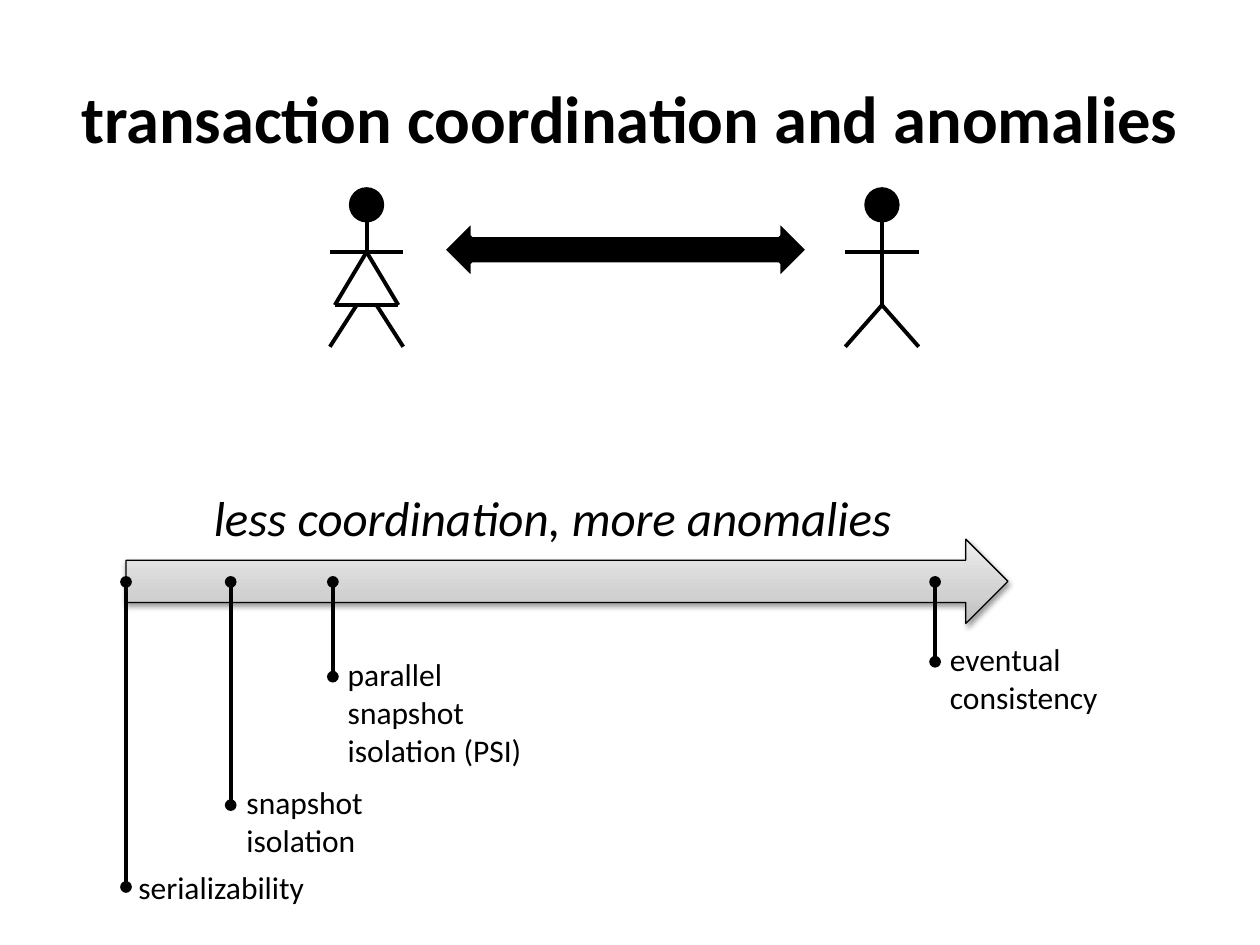
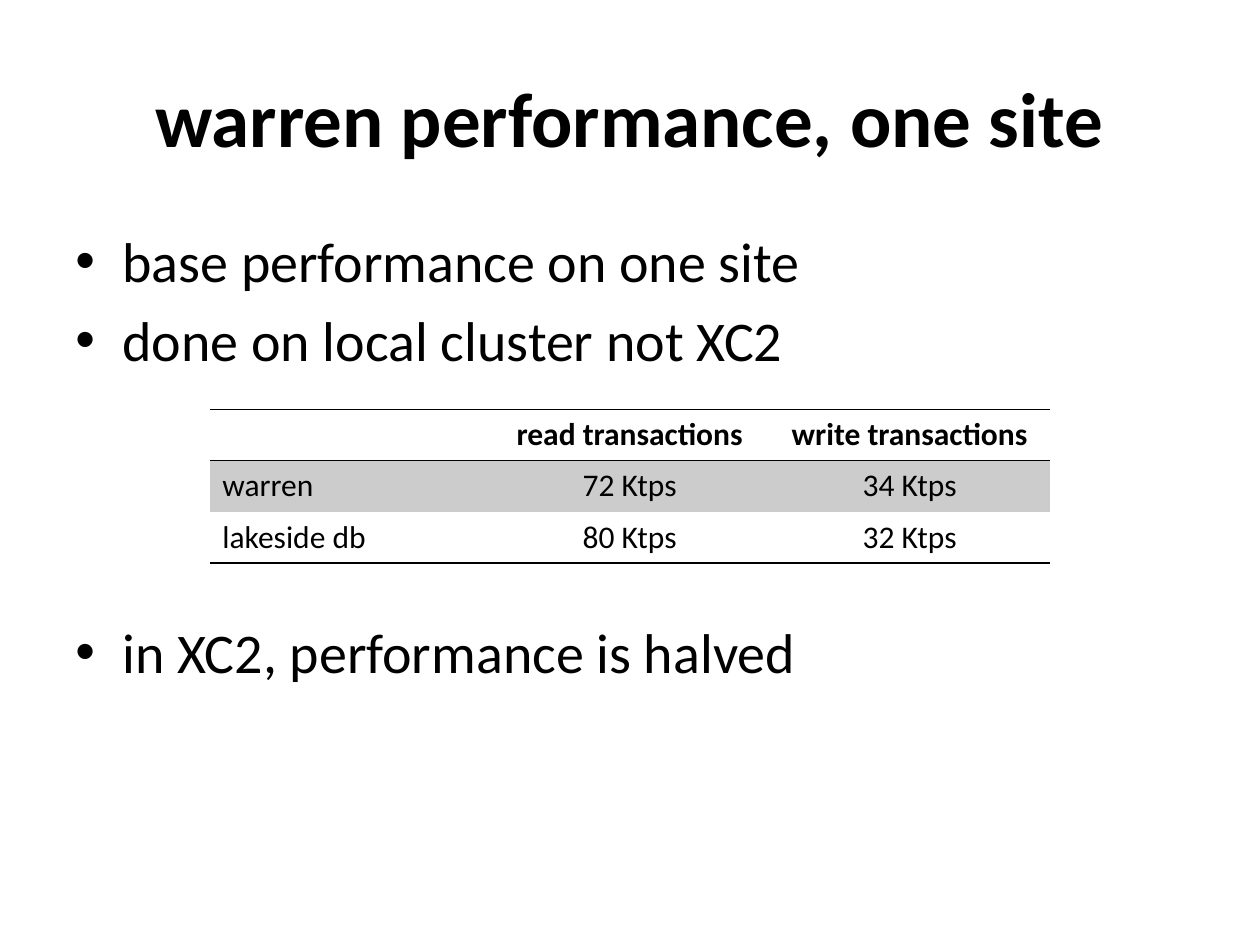
"""Build two slides on transaction coordination and one-site performance."""
from copy import deepcopy

from lxml.etree import SubElement
from pptx import Presentation
from pptx.dml.color import RGBColor
from pptx.enum.shapes import MSO_CONNECTOR as CONN, MSO_SHAPE as SHAPE
from pptx.enum.text import MSO_ANCHOR as ANCHOR, MSO_AUTO_SIZE as AUTO, PP_ALIGN as ALIGN
from pptx.oxml.ns import qn
from pptx.util import Cm, Pt

FONT, INK, WHITE, BAND = "Calibri", "000000", "FFFFFF", "CCCCCC"
rgb = RGBColor.from_string


def add_text(s, text, box, size, bold=False, italic=False, wrap=False):
    tf = s.shapes.add_textbox(*map(Cm, box)).text_frame
    tf.text = text
    tf.word_wrap = wrap
    tf.auto_size = AUTO.NONE if wrap else AUTO.SHAPE_TO_FIT_TEXT
    for p in tf.paragraphs:
        for r in p.runs:
            f = r.font
            f.name, f.size, f.bold, f.italic = FONT, Pt(size), bold, italic
            f.color.rgb = rgb(INK)
    return tf


def add_line(s, x1, y1, x2, y2, dots=False):
    c = s.shapes.add_connector(CONN.STRAIGHT, Cm(x1), Cm(y1), Cm(x2), Cm(y2))
    c.line.width = Pt(2.25)
    c.line.color.rgb = rgb(INK)
    SubElement(c._element.spPr, qn("a:effectLst"))
    if dots:
        for end in ("a:headEnd", "a:tailEnd"):
            SubElement(c.line._get_or_add_ln(), qn(end), type="oval")


prs = Presentation()
prs.slide_width, prs.slide_height = Cm(25.4), Cm(19.05)
titles = [("transaction coordination and anomalies", 38),
          ("warren performance, one site", 44)]
for title, size in titles:
    s = prs.slides.add_slide(prs.slide_layouts[6])
    tf = add_text(s, title, (1.27, 0.76, 22.86, 3.18), size, bold=True, wrap=True)
    tf.vertical_anchor = ANCHOR.MIDDLE
    tf.paragraphs[0].alignment = ALIGN.CENTER
s, perf = prs.slides

add_text(s, "less coordination, more anomalies", (4.06, 9.7, 14.73, 1.45), 28, italic=True)

scale = s.shapes.add_shape(SHAPE.RIGHT_ARROW, Cm(2.54), Cm(10.87), Cm(17.78), Cm(1.7))
scale.fill.gradient()
scale.fill.gradient_angle = 90
gs_list = scale._element.spPr.find(qn("a:gradFill")).find(qn("a:gsLst"))
gs_list.append(deepcopy(gs_list[0]))
shades = [(0, "BDBDBD"), (0.35, "D1D1D1"), (1, "EEEEEE")]
for stop, (position, shade) in zip(scale.fill.gradient_stops, shades):
    stop.position = position
    stop.color.rgb = rgb(shade)
scale.line.color.rgb = rgb(INK)
scale.line.width = Pt(0.75)
scale.shadow.inherit = False
shadow = SubElement(scale._element.spPr.find(qn("a:effectLst")), qn("a:outerShdw"),
                    blurRad=str(Pt(3.1)), dist=str(Pt(1.6)), dir="5400000", rotWithShape="0")
SubElement(SubElement(shadow, qn("a:srgbClr"), val=INK), qn("a:alpha"), val="38000")

levels = [
    (2.54, 17.88, "serializability", (2.54, 17.37, 3.89, 1.02)),
    (4.65, 16.23, "snapshot\visolation", (4.72, 15.67, 2.9, 1.98)),
    (6.71, 13.64, "parallel\nsnapshot\visolation (PSI)", (6.76, 13.08, 4.06, 2.57)),
    (18.85, 13.34, "eventual\nconsistency", (18.9, 12.78, 3.53, 1.63)),
]
for x, bottom, label, box in levels:
    add_text(s, label, box, 18)
    add_line(s, x, 11.73, x, bottom, dots=True)

NECK, ARMS, HIP, FEET, REACH = 4.45, 5.08, 6.15, 6.99, 0.74
man = [(0, NECK, 0, HIP), (0, HIP, -REACH, FEET), (0, HIP, REACH, FEET)]
woman = [(0, NECK, 0, ARMS), (-0.2, HIP, -REACH, FEET), (0.2, HIP, REACH, FEET),
         (0, ARMS, -0.64, HIP), (0, ARMS, 0.64, HIP), (-0.64, HIP, 0.64, HIP)]
for x, limbs in ((17.78, man), (7.39, woman)):
    head = s.shapes.add_shape(SHAPE.OVAL, Cm(x - 0.32), Cm(3.81), Cm(0.64), Cm(0.64))
    head.fill.solid()
    head.fill.fore_color.rgb = head.line.color.rgb = rgb(INK)
    head.line.width = Pt(2)
    head.shadow.inherit = False
    for x1, y1, x2, y2 in limbs + [(-REACH, ARMS, REACH, ARMS)]:
        add_line(s, x + x1, y1, x + x2, y2)

link = s.shapes.add_shape(SHAPE.LEFT_RIGHT_ARROW, Cm(8.94), Cm(4.45), Cm(7.34), Cm(1.17))
link.fill.solid()
link.fill.fore_color.rgb = rgb(INK)
link.line.color.rgb = rgb(WHITE)
link.line.width = Pt(2)
link.shadow.inherit = False

bullets = ["base performance on one site", "done on local cluster not XC2",
           "in XC2, performance is halved"]
tf = add_text(perf, "\n".join(bullets), (1.27, 4.45, 22.86, 12.57), 32, wrap=True)
for p, gap in zip(tf.paragraphs, (6.4, 6.4, 140)):
    p.space_before = Pt(gap)
    pPr = p._p.get_or_add_pPr()
    pPr.set("marL", str(Cm(0.95)))
    pPr.set("indent", str(-Cm(0.95)))
    SubElement(pPr, qn("a:buFont"), typeface="Arial")
    SubElement(pPr, qn("a:buChar"), char="•")

rows = [("", "read transactions", "write transactions"),
        ("warren", "72 Ktps", "34 Ktps"),
        ("lakeside db", "80 Ktps", "32 Ktps")]
frame = perf.shapes.add_table(3, 3, Cm(4.23), Cm(8.25), Cm(16.93), Cm(3.1))
tbl = frame.table
tbl.first_row = tbl.horz_banding = False
tbl._tbl.tblPr[0].text = "{2D5ABB26-0587-4C30-8999-92F81FD0307C}"
edges = [("a:lnT", "a:lnB"), (), ("a:lnB",)]
for i, row in enumerate(rows):
    for j, text in enumerate(row):
        cell = tbl.cell(i, j)
        for edge in edges[i]:
            ln = SubElement(cell._tc.get_or_add_tcPr(), qn(edge), w=str(Pt(1)))
            SubElement(SubElement(ln, qn("a:solidFill")), qn("a:srgbClr"), val=INK)
        if i == 1:
            cell.fill.solid()
            cell.fill.fore_color.rgb = rgb(BAND)
        else:
            cell.fill.background()
        cell.text = text
        p = cell.text_frame.paragraphs[0]
        p.alignment = ALIGN.CENTER if j else ALIGN.LEFT
        for r in p.runs:
            f = r.font
            f.name, f.size, f.bold = FONT, Pt(18), i == 0
            f.color.rgb = rgb(INK)

prs.save("out.pptx")
